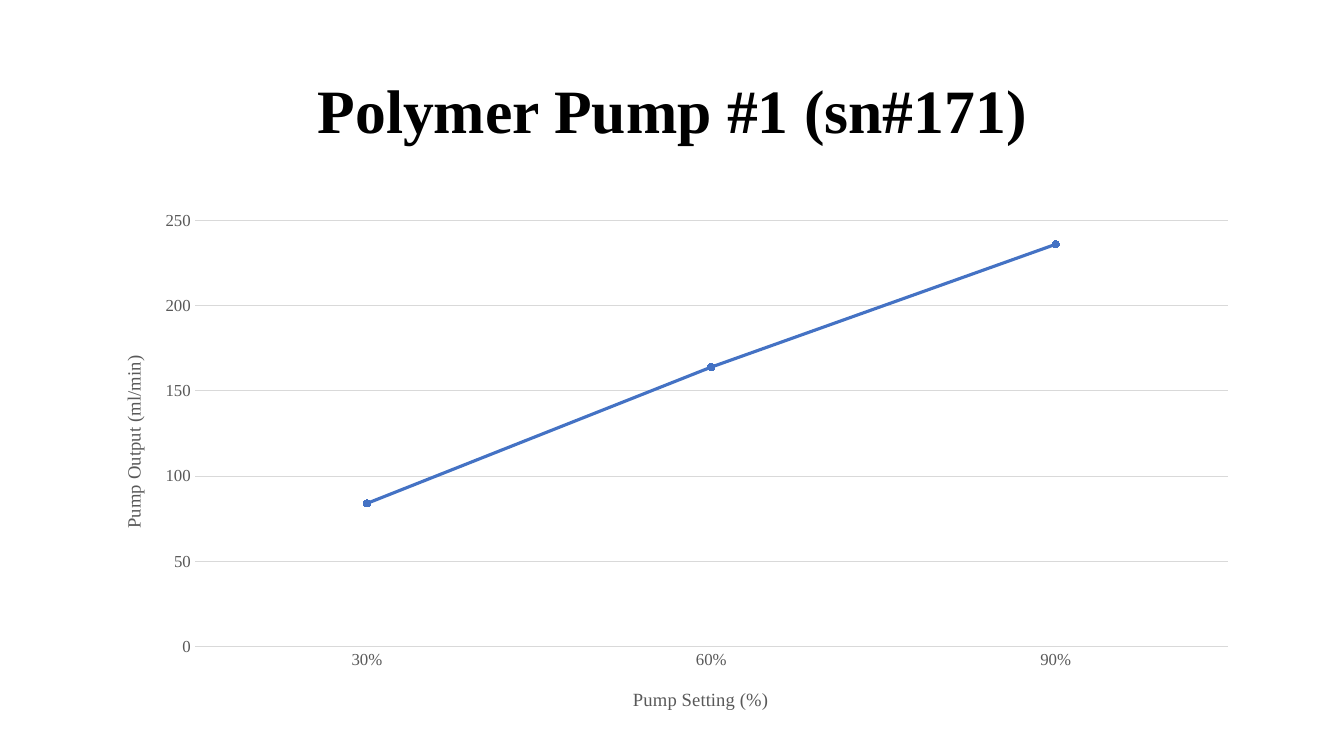
from dataclasses import dataclass

from pptx import Presentation, util as u
from pptx.chart import data as chart_data
from pptx.dml.color import RGBColor
from pptx.enum import chart as chart_enum, text
from pptx.oxml import parse_xml
from pptx.oxml.ns import nsdecls, qn


@dataclass(frozen=True)
class Theme:
    font: str = "Times New Roman"
    base_font: str = "Calibri"
    title_color: str = "000000"
    label_color: str = "595959"
    grid_color: str = "D9D9D9"
    series_color: str = "4472C4"
    title_size: float = 44
    axis_title_size: float = 13.3
    label_size: float = 12
    base_size: float = 10


def format_font(font, name, size, color, bold=False):
    font.name = name
    font.size = u.Pt(size)
    font.bold = bold
    font.color.rgb = RGBColor.from_string(color)


def write_text(frame, content, align=None, line_spacing=None, **font_format):
    paragraph = frame.paragraphs[0]
    if align is not None:
        paragraph.alignment = align
    if line_spacing is not None:
        paragraph.line_spacing = line_spacing
    run = paragraph.add_run()
    run.text = content
    format_font(run.font, **font_format)


def format_line(line, color, width):
    line.color.rgb = RGBColor.from_string(color)
    line.width = u.Pt(width)


def set_layout(parent, index, target=None, **fractions):
    previous = parent.find(qn("c:layout"))
    if previous is not None:
        parent.remove(previous)
    settings = [("layoutTarget", target)] if target else []
    settings += [("xMode", "edge"), ("yMode", "edge"), *fractions.items()]
    children = "".join(f'<c:{tag} val="{value}"/>' for tag, value in settings)
    parent.insert(index, parse_xml(
        f'<c:layout {nsdecls("c")}><c:manualLayout>{children}'
        "</c:manualLayout></c:layout>"))


class SlideBuilder:
    def __init__(self, presentation, theme):
        self.theme = theme
        self.slide = presentation.slides.add_slide(presentation.slide_layouts[5])

    def title(self, content, left, top, width, height):
        shape = self.slide.shapes.title
        shape.left, shape.top = u.Inches(left), u.Inches(top)
        shape.width, shape.height = u.Inches(width), u.Inches(height)
        frame = shape.text_frame
        frame.word_wrap = True
        frame.vertical_anchor = text.MSO_ANCHOR.MIDDLE
        write_text(frame, content, align=text.PP_ALIGN.CENTER, line_spacing=0.9,
                   name=self.theme.font, size=self.theme.title_size,
                   color=self.theme.title_color, bold=True)

    def axis(self, axis, title, x, y):
        theme = self.theme
        axis.major_tick_mark = axis.minor_tick_mark = chart_enum.XL_TICK_MARK.NONE
        format_font(axis.tick_labels.font, theme.font, theme.label_size,
                    theme.label_color)
        write_text(axis.axis_title.text_frame, title, name=theme.font,
                   size=theme.axis_title_size, color=theme.label_color)
        set_layout(axis.axis_title._element, 1, x=x, y=y)

    def line_chart(self, settings, outputs, left, top, width, height):
        theme = self.theme
        pump_data = chart_data.CategoryChartData()
        pump_data.categories = settings
        pump_data.categories.number_format = "0%"
        pump_data.add_series("Series 1", outputs)
        chart = self.slide.shapes.add_chart(
            chart_enum.XL_CHART_TYPE.LINE_MARKERS_STACKED, u.Inches(left),
            u.Inches(top), u.Inches(width), u.Inches(height), pump_data).chart
        chart.has_legend = chart.has_title = False
        format_font(chart.font, theme.base_font, theme.base_size, theme.title_color)
        set_layout(chart._chartSpace.chart.plotArea, 0, target="inner",
                   x=0.088, y=0.036, w=0.891, h=0.81)

        setting_axis, output_axis = chart.category_axis, chart.value_axis
        self.axis(setting_axis, "Pump Setting (%)", x=0.463, y=0.917)
        self.axis(output_axis, "Pump Output (ml/min)", x=0.022, y=0.286)
        setting_axis.tick_labels.number_format = "0%"
        setting_axis.tick_labels.number_format_is_linked = False
        format_line(setting_axis.format.line, theme.grid_color, 0.75)
        output_axis.minimum_scale = 0
        output_axis.maximum_scale = 250
        output_axis.major_unit = 50
        output_axis.format.line.fill.background()
        format_line(output_axis.major_gridlines.format.line, theme.grid_color, 0.75)

        chart.plots[0].vary_by_categories = False
        series = chart.plots[0].series[0]
        series.smooth = False
        format_line(series.format.line, theme.series_color, 2.25)
        series.marker.style = chart_enum.XL_MARKER_STYLE.CIRCLE
        series.marker.size = 5
        series.marker.format.fill.solid()
        series.marker.format.fill.fore_color.rgb = RGBColor.from_string(
            theme.series_color)
        format_line(series.marker.format.line, theme.series_color, 0.75)


def main():
    presentation = Presentation()
    presentation.slide_width = u.Inches(13.33)
    presentation.slide_height = u.Inches(7.5)
    builder = SlideBuilder(presentation, Theme())
    builder.title("Polymer Pump #1 (sn#171)", 0.92, 0.4, 11.5, 1.45)
    builder.line_chart([0.3, 0.6, 0.9], [84, 164, 236], 0.92, 2, 11.5, 5.22)
    presentation.save("out.pptx")


if __name__ == "__main__":
    main()
